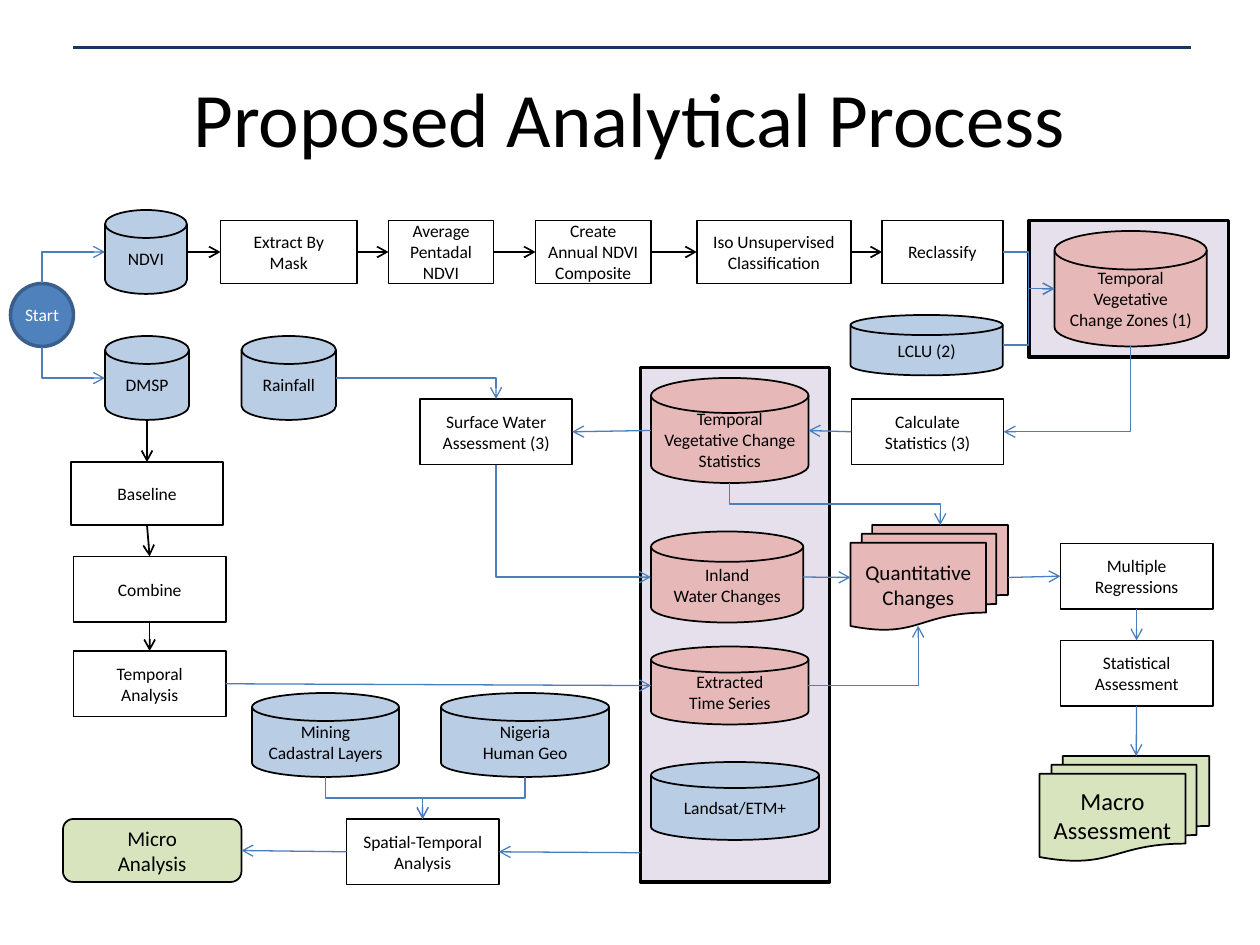
from itertools import pairwise
from lxml import etree
from pptx import Presentation
from pptx.dml.color import RGBColor
from pptx.enum.shapes import MSO_CONNECTOR as CONN, MSO_SHAPE as SHAPE
from pptx.enum.text import MSO_ANCHOR as ANCHOR, PP_ALIGN as ALIGN
from pptx.oxml.ns import qn
from pptx.util import Pt

BLACK, WHITE, LINK = "000000", "FFFFFF", "4B7EBC"
BLUE, PINK, GREEN, LILAC = "B9CDE5", "E6B9B8", "D7E4BD", "E6E0EC"
SIDES = {"l": (0, 0.5), "r": (1, 0.5), "t": (0.5, 0), "b": (0.5, 1)}
DOC_SIDES = {**SIDES, "t": (0.57, 0), "b": (0.43, 0.96)}


def color(value):
    return RGBColor.from_string(value)


def side(sp, name):
    stacked = sp.auto_shape_type == SHAPE.FLOWCHART_MULTIDOCUMENT
    fx, fy = (DOC_SIDES if stacked else SIDES)[name]
    return int(sp.left + fx * sp.width), int(sp.top + fy * sp.height)


class Canvas:
    font = "Calibri"

    def __init__(self, slide):
        self.slide = slide

    def label(self, tf, text, size, ink=BLACK):
        tf.vertical_anchor = ANCHOR.MIDDLE
        for i, line in enumerate(text.split("\n")):
            p = tf.add_paragraph() if i else tf.paragraphs[0]
            p.alignment = ALIGN.CENTER
            r = p.add_run()
            r.text = line
            r.font.name, r.font.size = self.font, Pt(size)
            r.font.color.rgb = color(ink)

    def title(self, text, *box):
        tf = self.slide.shapes.add_textbox(*map(Pt, box)).text_frame
        tf.word_wrap = True
        self.label(tf, text, 44)

    def shape(self, kind, fill, box, text="", size=10, ink=BLACK,
              line=BLACK, weight=1, wrap=True):
        sp = self.slide.shapes.add_shape(kind, *map(Pt, box))
        sp.shadow.inherit = False
        sp.fill.solid()
        sp.fill.fore_color.rgb = color(fill)
        sp.line.color.rgb = color(line)
        sp.line.width = Pt(weight)
        sp.text_frame.word_wrap = wrap
        if text:
            self.label(sp.text_frame, text, size, ink)
        return sp

    def panel(self, *box):
        return self.shape(SHAPE.RECTANGLE, LILAC, box, weight=2)

    def step(self, text, x, y, w=87, h=37.5):
        return self.shape(SHAPE.RECTANGLE, WHITE, (x, y, w, h), text)

    def disk(self, text, fill, *box):
        return self.shape(SHAPE.FLOWCHART_MAGNETIC_DISK, fill, box, text)

    def docs(self, text, fill, size, *box):
        return self.shape(SHAPE.FLOWCHART_MULTIDOCUMENT, fill, box, text, size)

    def line(self, start, end, ink=LINK, weight=0.75, kind=CONN.STRAIGHT, head=True):
        c = self.slide.shapes.add_connector(kind, *start, *end)
        c.line.color.rgb = color(ink)
        c.line.width = Pt(weight)
        spPr = c._element.spPr
        if head:
            etree.SubElement(spPr.find(qn("a:ln")), qn("a:tailEnd"),
                             type="arrow", w="med", len="med")
        etree.SubElement(spPr, qn("a:effectLst"))
        return c

    def flow(self, a, b, sides="rl", **style):
        return self.line(side(a, sides[0]), side(b, sides[1]), **style)

    def elbow(self, a, b, sides):
        (x1, y1), (x2, y2) = side(a, sides[0]), side(b, sides[1])
        turned = sides[0] in "tb"
        if turned:
            cx, cy, dx, dy = (x1 + x2) / 2, (y1 + y2) / 2, x2 - x1, y2 - y1
            x1, y1 = int(cx - dy / 2), int(cy + dx / 2)
            x2, y2 = int(cx + dy / 2), int(cy - dx / 2)
        c = self.line((x1, y1), (x2, y2), kind=CONN.ELBOW)
        spPr = c._element.spPr
        if turned:
            spPr.find(qn("a:xfrm")).set("rot", "5400000")
        if (sides[0] in "lr") != (sides[1] in "lr"):
            spPr.find(qn("a:prstGeom")).set("prst", "bentConnector2")


def main():
    prs = Presentation()
    prs.slide_width, prs.slide_height = Pt(720), Pt(540)
    s = Canvas(prs.slides.add_slide(prs.slide_layouts[6]))

    s.line((Pt(42), Pt(27)), (Pt(680.5), Pt(27)), "17375E", 1.5, head=False)
    s.title("Proposed Analytical Process", 36, 21.6, 648, 90)
    s.panel(366, 210, 108, 294)
    s.panel(588, 126, 114, 78)

    start = s.shape(SHAPE.OVAL, "4F81BD", (6, 162, 36, 36), "Start", ink=WHITE,
                    line="3A5F8C", weight=2, wrap=False)
    ndvi = s.disk("NDVI", BLUE, 60, 120, 46.8, 48)
    dmsp = s.disk("DMSP", BLUE, 60, 192, 48, 48)
    rainfall = s.disk("Rainfall", BLUE, 138, 192, 54, 48)
    lclu = s.disk("LCLU (2)", BLUE, 486, 180, 87, 34.5)
    zones = s.disk("Temporal\nVegetative\nChange Zones (1)", PINK, 602.6, 132, 87, 66)
    statistics = s.disk("Temporal\nVegetative Change\nStatistics", PINK, 372, 216, 90, 60)
    inland = s.disk("Inland\nWater Changes", PINK, 372, 303.75, 87, 52)
    series = s.disk("Extracted\nTime Series", PINK, 372, 369.5, 90, 44.5)
    s.disk("Landsat/ETM+", BLUE, 372, 435.5, 96, 44.5)
    mining = s.disk("Mining\nCadastral Layers", BLUE, 144, 396, 84, 48)
    human = s.disk("Nigeria\nHuman Geo", BLUE, 252, 396, 96, 48)

    row = [ndvi] + [s.step(text, x, 126, w, 36) for text, x, w in (
        ("Extract By\nMask", 126, 78),
        ("Average\nPentadal NDVI", 222, 60),
        ("Create Annual NDVI Composite", 306, 66),
        ("Iso Unsupervised\nClassification", 398.2, 88),
        ("Reclassify", 504, 69))]
    column = [dmsp, s.step("Baseline", 40.5, 264, h=36),
              s.step("Combine", 42, 318), s.step("Temporal\nAnalysis", 42, 372)]
    water = s.step("Surface Water\nAssessment (3)", 240, 228)
    calculate = s.step("Calculate Statistics (3)", 486.5, 228)
    regressions = s.step("Multiple\nRegressions", 606, 310.5)
    assessment = s.step("Statistical\nAssessment", 606, 366)
    spatial = s.step("Spatial-Temporal\nAnalysis", 198, 468)
    micro = s.shape(SHAPE.ROUNDED_RECTANGLE, GREEN, (36, 468, 102, 36),
                    "Micro\nAnalysis", 12)
    changes = s.docs("Quantitative Changes", PINK, 12, 486, 300, 90, 60)
    macro = s.docs("Macro\nAssessment", GREEN, 14, 594, 432, 97, 60)

    for chain, sides in ((row, "rl"), (column, "bt")):
        for a, b in pairwise(chain):
            s.flow(a, b, sides, ink=BLACK, weight=1)
    for a, b, sides in (
            (calculate, statistics, "lr"), (statistics, water, "lr"),
            (column[-1], series, "rl"), (inland, changes, "rl"),
            (changes, regressions, "rl"), (regressions, assessment, "bt"),
            (assessment, macro, "bt"), (spatial, micro, "lr")):
        s.flow(a, b, sides)
    s.line((Pt(366), Pt(487.3)), side(spatial, "r"))
    for a, b, sides in (
            (start, ndvi, "tl"), (start, dmsp, "bl"), (row[-1], zones, "rl"),
            (lclu, zones, "rl"), (zones, calculate, "br"), (rainfall, water, "rt"),
            (water, inland, "bl"), (statistics, changes, "bt"),
            (series, changes, "rb"), (mining, spatial, "bt"),
            (human, spatial, "bt")):
        s.elbow(a, b, sides)

    prs.save("out.pptx")


if __name__ == "__main__":
    main()
